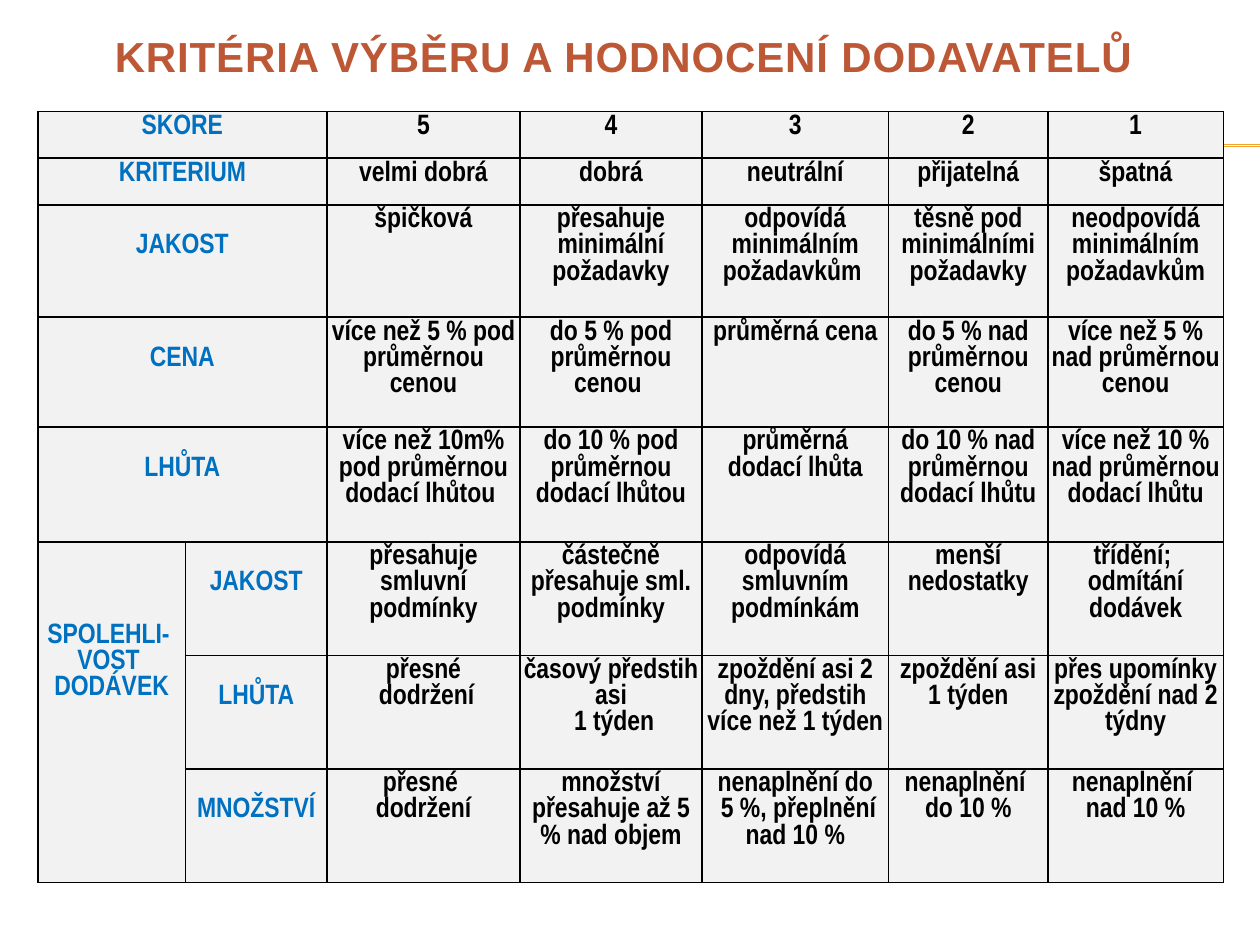
from lxml.etree import SubElement
from pptx import Presentation
from pptx.dml.color import RGBColor
from pptx.enum.shapes import MSO_CONNECTOR
from pptx.enum.text import MSO_ANCHOR, PP_ALIGN
from pptx.oxml.ns import qn
from pptx.util import Inches, Pt

SLIDE_WIDTH, SLIDE_HEIGHT = Inches(10), Inches(7.5)
COLORS = {
    "title": "BD5836",
    "rule": "F0A22E",
    "heading": "0070C0",
    "body": "000000",
    "cell": "F2F2F2",
    "border": "000000",
}
COLUMN_WEIGHTS = [1.17, 1.12, 1.53, 1.44, 1.48, 1.26, 1.39]
ROW_WEIGHTS = [0.37, 0.37, 0.89, 0.87, 0.91, 0.9, 0.9, 0.9]
HEADING_COLUMNS = 2
RELIABILITY_ROW = 5
LINE_PITCH = Pt(15)
CELL_MARGIN = Inches(0.02)

CRITERIA = [
    ["SKORE", "", "5", "4", "3", "2", "1"],
    ["KRITERIUM", "", "velmi dobrá", "dobrá", "neutrální", "přijatelná", "špatná"],
    ["JAKOST", "", "špičková", "přesahuje minimální\npožadavky",
     "odpovídá minimálním\npožadavkům ", "těsně pod minimálními požadavky",
     "neodpovídá minimálním požadavkům"],
    ["CENA", "", "více než 5 % pod průměrnou cenou", "do 5 % pod průměrnou cenou ",
     "průměrná cena", "do 5 % nad průměrnou cenou",
     "více než 5 % nad průměrnou cenou"],
    ["LHŮTA", "", "více než 10m% pod průměrnou dodací lhůtou ",
     "do 10 % pod průměrnou dodací lhůtou", "průměrná dodací lhůta",
     "do 10 % nad průměrnou dodací lhůtu",
     "více než 10 % nad průměrnou dodací lhůtu"],
    ["SPOLEHLI- \nVOST \nDODÁVEK", "JAKOST", "přesahuje smluvní podmínky",
     "částečně přesahuje sml. podmínky", "odpovídá smluvním podmínkám",
     "menší nedostatky", "třídění; \nodmítání dodávek"],
    ["", "LHŮTA", "přesné\n dodržení", "časový předstih asi\n 1 týden",
     "zpoždění asi 2 dny, předstih více než 1 týden", "zpoždění asi\n1 týden",
     "přes upomínky zpoždění nad 2 týdny"],
    ["", "MNOŽSTVÍ", "přesné \ndodržení", "množství přesahuje až 5 % nad objem",
     "nenaplnění do\n 5 %, přeplnění nad 10 %", "nenaplnění \ndo 10 %",
     "nenaplnění \nnad 10 %"],
]


def color(role):
    return RGBColor.from_string(COLORS[role])


def across(percent):
    return round(SLIDE_WIDTH * percent / 100)


def down(percent):
    return round(SLIDE_HEIGHT * percent / 100)


def style_paragraph(paragraph, font_name, size, role):
    paragraph.alignment = PP_ALIGN.CENTER
    paragraph.font.name = font_name
    paragraph.font.size = Pt(size)
    paragraph.font.bold = True
    paragraph.font.color.rgb = color(role)


def add_rule(slide, height):
    rule = slide.shapes.add_connector(
        MSO_CONNECTOR.STRAIGHT, across(5.6), down(height), across(100), down(height))
    rule.line.color.rgb = color("rule")
    rule.line.width = Pt(0.75)
    SubElement(rule._element.spPr, qn("a:effectLst"))


def add_title(slide, wording):
    title = slide.shapes.add_textbox(across(4.5), down(2), across(90), down(7.75))
    frame = title.text_frame
    frame.word_wrap = True
    frame.vertical_anchor = MSO_ANCHOR.MIDDLE
    paragraph = frame.paragraphs[0]
    run = paragraph.add_run()
    run.text = wording
    run._r.get_or_add_rPr().set("spc", "50")
    style_paragraph(paragraph, "Arial", 24, "title")


def add_borders(cell):
    properties = cell._tc.get_or_add_tcPr()
    for side in ("lnL", "lnR", "lnT", "lnB"):
        border = SubElement(properties, qn(f"a:{side}"), w=str(Pt(1)))
        fill = SubElement(border, qn("a:solidFill"))
        SubElement(fill, qn("a:srgbClr"), val=COLORS["border"])


def fill_cell(cell, wording, role, lines_above):
    add_borders(cell)
    cell.fill.solid()
    cell.fill.fore_color.rgb = color("cell")
    cell.margin_left = cell.margin_right = cell.margin_bottom = CELL_MARGIN
    cell.margin_top = CELL_MARGIN + lines_above * LINE_PITCH
    cell.text = wording
    for paragraph in cell.text_frame.paragraphs:
        style_paragraph(paragraph, "Arial Narrow", 16, role)
        paragraph.line_spacing = LINE_PITCH


def count_lines_above(row, column):
    if column >= HEADING_COLUMNS or row < 2:
        return 0
    return 3 if row >= RELIABILITY_ROW and column == 0 else 1


def add_criteria_table(slide):
    width, height = across(94.1), down(81.6)
    table = slide.shapes.add_table(
        len(ROW_WEIGHTS), len(COLUMN_WEIGHTS),
        across(3), down(11.8), width, height).table
    for column, weight in zip(table.columns, COLUMN_WEIGHTS):
        column.width = round(width * weight / sum(COLUMN_WEIGHTS))
    for row, weight in zip(table.rows, ROW_WEIGHTS):
        row.height = round(height * weight / sum(ROW_WEIGHTS))
    for r, wordings in enumerate(CRITERIA):
        for c, wording in enumerate(wordings):
            role = "heading" if c < HEADING_COLUMNS else "body"
            fill_cell(table.cell(r, c), wording, role, count_lines_above(r, c))
    for r in range(RELIABILITY_ROW):
        table.cell(r, 0).merge(table.cell(r, HEADING_COLUMNS - 1))
    table.cell(RELIABILITY_ROW, 0).merge(table.cell(len(ROW_WEIGHTS) - 1, 0))


def main():
    presentation = Presentation()
    presentation.slide_width, presentation.slide_height = SLIDE_WIDTH, SLIDE_HEIGHT
    slide = presentation.slides.add_slide(presentation.slide_layouts[6])
    for height in (15.33, 15.47):
        add_rule(slide, height)
    add_title(slide, "KRITÉRIA VÝBĚRU A HODNOCENÍ DODAVATELŮ")
    add_criteria_table(slide)
    presentation.save("out.pptx")


if __name__ == "__main__":
    main()
